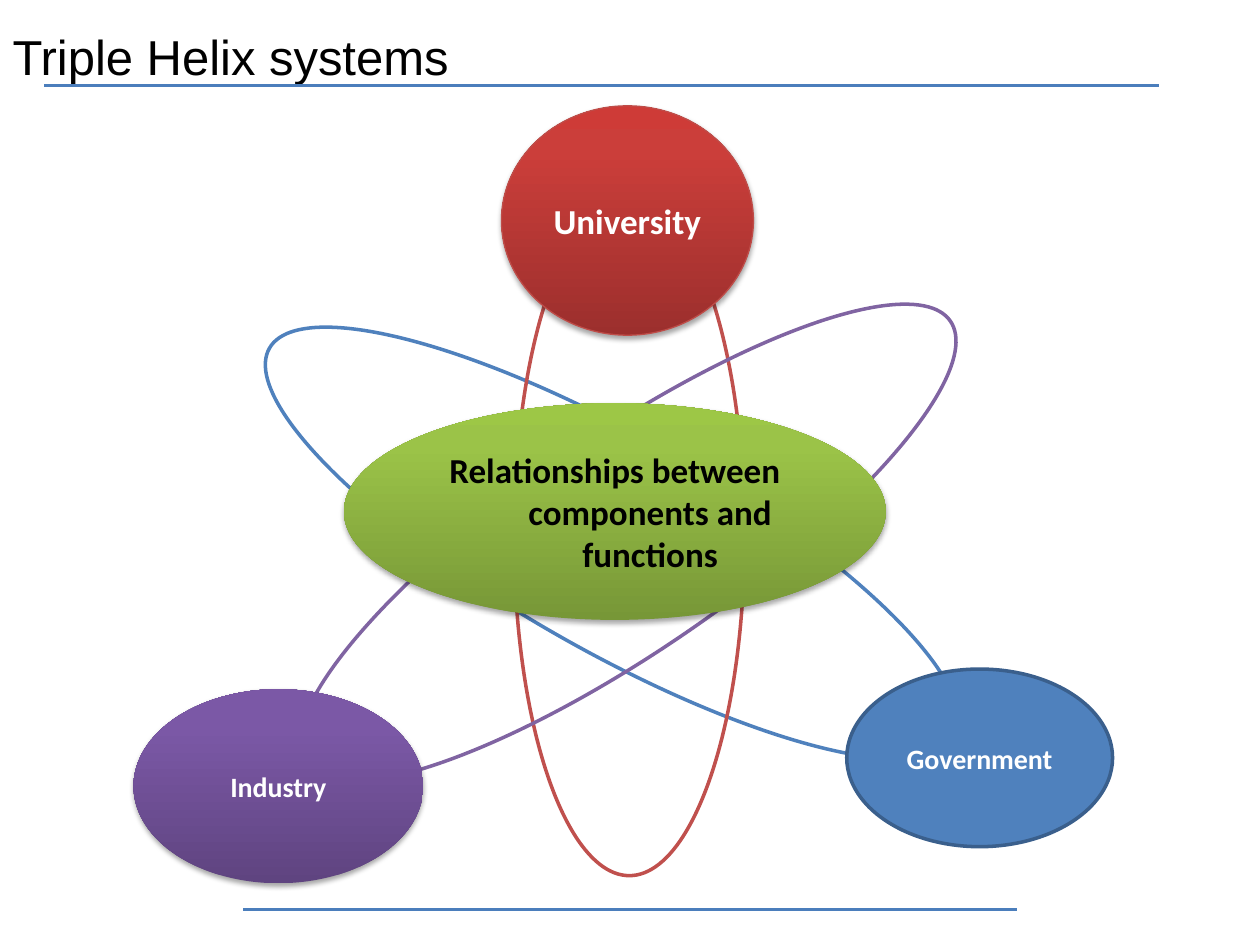
from copy import deepcopy

from lxml import etree
from pptx import Presentation
from pptx.dml.color import RGBColor
from pptx.enum import shapes, text
from pptx.oxml.ns import qn
from pptx.util import Inches, Pt

TITLE = "Triple Helix systems"
COLOURS = {
    "rule": "4B7EBC", "blue": "4F81BD", "red": "C0504D", "purple": "8064A2",
    "red edge": "BF4C48", "blue edge": "3A5F8C", "white": "FFFFFF", "black": "000000",
}
GRADIENTS = {  # bottom, upper part, top
    "red": ("9C2F2D", "CB3E3A", "CE3B37"),
    "purple": ("5F4480", "7B58A6", "7C57A8"),
    "green": ("779737", "9BC348", "9DC746"),
}
GRADIENT_POSITIONS = (0, 0.8, 1)

RULES = [(1.93, 8.07, 7.22), (0.35, 9.2, 0.68)]  # left, right, height on page
ORBITS = [  # box, rotation, colour
    ((4.01, 1.18, 1.7, 6.26), 299.6, "blue"),
    ((4.08, 1.55, 1.83, 5.4), 0, "red"),
    ((4.13, 1.2, 1.7, 6.22), 55.5, "purple"),
]
NODES = [
    dict(label="University", box=(3.98, 0.84, 2, 1.82), size=20,
         gradient="red", edge=("red edge", 0.75)),
    dict(label="Industry", box=(1.06, 5.47, 2.3, 1.54), size=16, gradient="purple"),
    dict(label="Government", box=(6.72, 5.31, 2.11, 1.41), size=16,
         solid="blue", edge=("blue edge", 2)),
    dict(label="Relationships between components and functions",
         box=(2.73, 3.2, 4.3, 1.72), size=20, gradient="green",
         ink="black", hanging=0.56),
]


def rgb(name):
    return RGBColor.from_string(COLOURS[name])


def assign(target, **values):
    for name, value in values.items():
        setattr(target, name, value)


def set_line(shape, colour, width):
    shape.line.color.rgb = rgb(colour)
    shape.line.width = Pt(width)


def add_rule(page, left, right, top):
    rule = page.shapes.add_connector(
        shapes.MSO_CONNECTOR.STRAIGHT, *map(Inches, (left, top, right, top)))
    set_line(rule, "rule", 2)
    etree.SubElement(rule._element.spPr, qn("a:effectLst"))


def add_ellipse(page, box, edge=None):
    ellipse = page.shapes.add_shape(shapes.MSO_SHAPE.OVAL, *map(Inches, box))
    ellipse.shadow.inherit = False
    if edge:
        set_line(ellipse, *edge)
    else:
        ellipse.line.fill.background()
    return ellipse


def add_gradient(shape, colours):
    shape.fill.gradient()
    shape.fill.gradient_angle = 90
    stop_list = shape._element.spPr.find(".//" + qn("a:gsLst"))
    stop_list.append(deepcopy(stop_list[0]))
    for stop, position, colour in zip(
            shape.fill.gradient_stops, GRADIENT_POSITIONS, colours):
        stop.position = position
        stop.color.rgb = RGBColor.from_string(colour)


def add_shadow(shape):
    effects = shape._element.spPr.find(qn("a:effectLst"))
    shadow = etree.SubElement(
        effects, qn("a:outerShdw"), blurRad=str(Pt(3.1)), dist=str(Pt(1.8)),
        dir=str(90 * 60000), rotWithShape="0")
    colour = etree.SubElement(shadow, qn("a:srgbClr"), val=COLOURS["black"])
    etree.SubElement(colour, qn("a:alpha"), val="35000")


def add_node(page, label, box, size, gradient=None, solid=None, edge=None,
             ink="white", hanging=0):
    node = add_ellipse(page, box, edge)
    if gradient:
        add_gradient(node, GRADIENTS[gradient])
        add_shadow(node)
    else:
        node.fill.solid()
        node.fill.fore_color.rgb = rgb(solid)
    frame = node.text_frame
    assign(frame, text=label, word_wrap=True, vertical_anchor=text.MSO_ANCHOR.MIDDLE)
    para = frame.paragraphs[0]
    para.alignment = text.PP_ALIGN.CENTER
    if hanging:
        properties = para._p.get_or_add_pPr()
        properties.set("marL", str(Inches(hanging)))
        properties.set("indent", str(-Inches(hanging)))
    span = para.runs[0]
    assign(span.font, name="Calibri", size=Pt(size), bold=True)
    span.font.color.rgb = rgb(ink)


def set_title(page):
    title = page.shapes.title
    assign(title, left=Inches(0), top=Inches(0.16), width=Inches(9.49), height=Inches(0.57))
    assign(title.text_frame, text=TITLE, word_wrap=True,
           vertical_anchor=text.MSO_ANCHOR.TOP,
           auto_size=text.MSO_AUTO_SIZE.SHAPE_TO_FIT_TEXT)
    para = title.text_frame.paragraphs[0]
    para.alignment = text.PP_ALIGN.LEFT
    span = para.runs[0]
    assign(span.font, name="Arial", size=Pt(28))
    span.font.color.rgb = rgb("black")


def main():
    deck = Presentation()
    assign(deck, slide_width=Inches(10), slide_height=Inches(7.5))
    page = deck.slides.add_slide(deck.slide_layouts.get_by_name("Title Only"))
    set_title(page)
    for rule in RULES:
        add_rule(page, *rule)
    for box, rotation, colour in ORBITS:
        orbit = add_ellipse(page, box, (colour, 2))
        orbit.fill.background()
        orbit.rotation = rotation
    for node in NODES:
        add_node(page, **node)
    deck.save("out.pptx")


if __name__ == "__main__":
    main()
